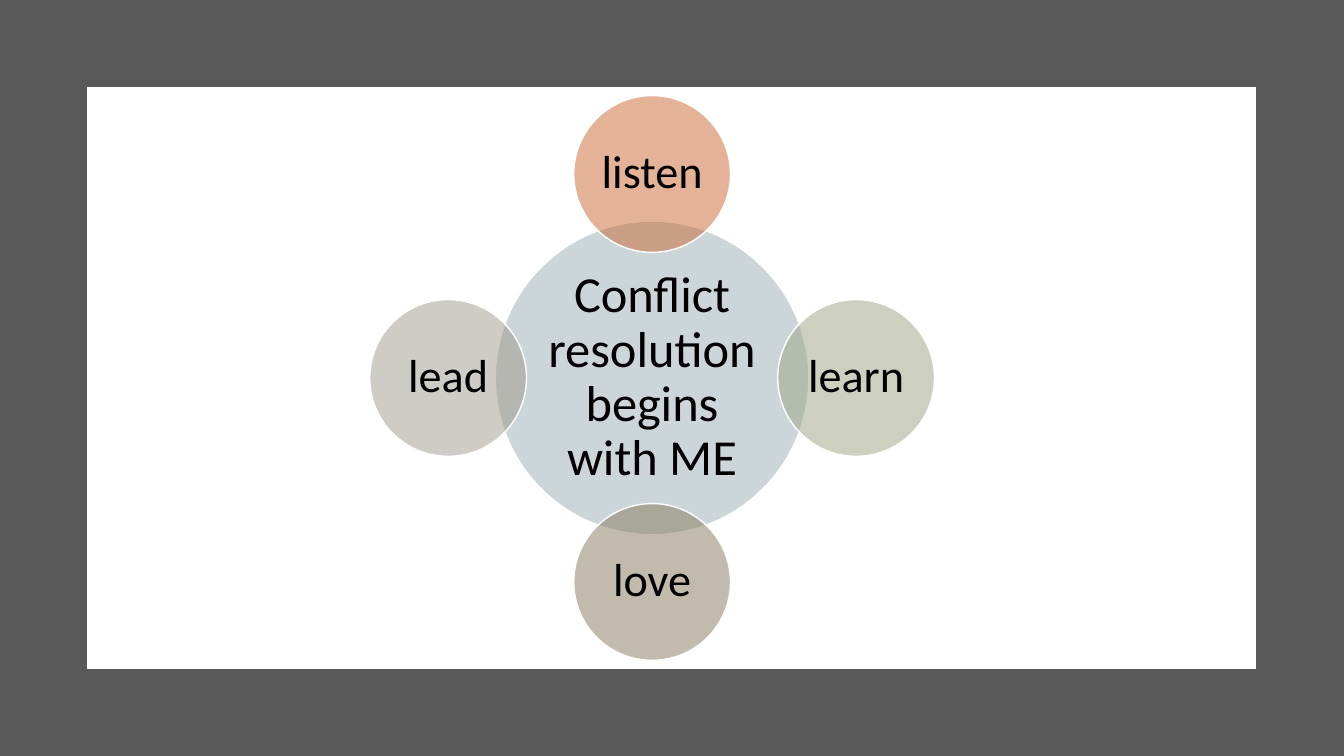
import math

import pptx
import pptx.dml.color
import pptx.enum.shapes
import pptx.enum.text
import pptx.oxml
import pptx.oxml.ns
import pptx.util

Pt = pptx.util.Pt
SHAPE = pptx.enum.shapes.MSO_SHAPE
NS = pptx.oxml.ns.nsdecls("a")


def rgb(color):
    return pptx.dml.color.RGBColor.from_string(color)


def add_filled(kind, left, top, width, height, fill, line_width):
    sp = s.shapes.add_shape(kind, Pt(left), Pt(top), Pt(width), Pt(height))
    sp.shadow.inherit = False
    sp.fill.solid()
    sp.fill.fore_color.rgb = rgb(fill)
    if line_width:
        sp.line.color.rgb = rgb("FFFFFF")
        sp.line.width = Pt(line_width)
        ln = sp.element.spPr.find(pptx.oxml.ns.qn("a:ln"))
        ln.append(pptx.oxml.parse_xml(f'<a:miter {NS} lim="800000"/>'))
    else:
        sp.line.fill.background()
    return sp


prs = pptx.Presentation()
prs.slide_width, prs.slide_height = Pt(960), Pt(540)
s = prs.slides.add_slide(prs.slide_layouts[6])
s.background.fill.solid()
s.background.fill.fore_color.rgb = rgb("F2F2F2")

add_filled(SHAPE.RECTANGLE, 0, 0, 960, 540, "595959", 0)
add_filled(SHAPE.RECTANGLE, 63.4, 63.4, 833, 413.2, "FFFFFF", 2)

center_x, center_y, orbit = 465.8, 270, 145.7
circles = [("Conflict resolution begins with ME", "9BAFB5", 224, 36, 3.6, center_x, center_y)]
satellites = [("listen", "C96731"), ("learn", "9CA383"), ("love", "87795D"), ("lead", "A0988C")]
for i, (word, color) in enumerate(satellites):
    angle = math.radians(90 * i - 90)
    x = center_x + orbit * math.cos(angle)
    y = center_y + orbit * math.sin(angle)
    circles.append((word, color, 112, 33, 0, x, y))

for text, color, diameter, size, margin, x, y in circles:
    sp = add_filled(SHAPE.OVAL, x - diameter / 2, y - diameter / 2, diameter, diameter, color, 1)
    clr = sp.element.spPr.find(pptx.oxml.ns.qn("a:solidFill"))[0]
    clr.append(pptx.oxml.parse_xml(f'<a:alpha {NS} val="50000"/>'))

    tf = sp.text_frame
    tf.word_wrap = True
    tf.vertical_anchor = pptx.enum.text.MSO_ANCHOR.MIDDLE
    tf.margin_left = tf.margin_right = tf.margin_top = tf.margin_bottom = Pt(margin)
    p = tf.paragraphs[0]
    p.alignment = pptx.enum.text.PP_ALIGN.CENTER
    p.line_spacing = 0.9
    r = p.add_run()
    r.text = text
    r.font.name = "Calibri"
    r.font.size = Pt(size)
    r.font.color.rgb = rgb("000000")

prs.save("out.pptx")
